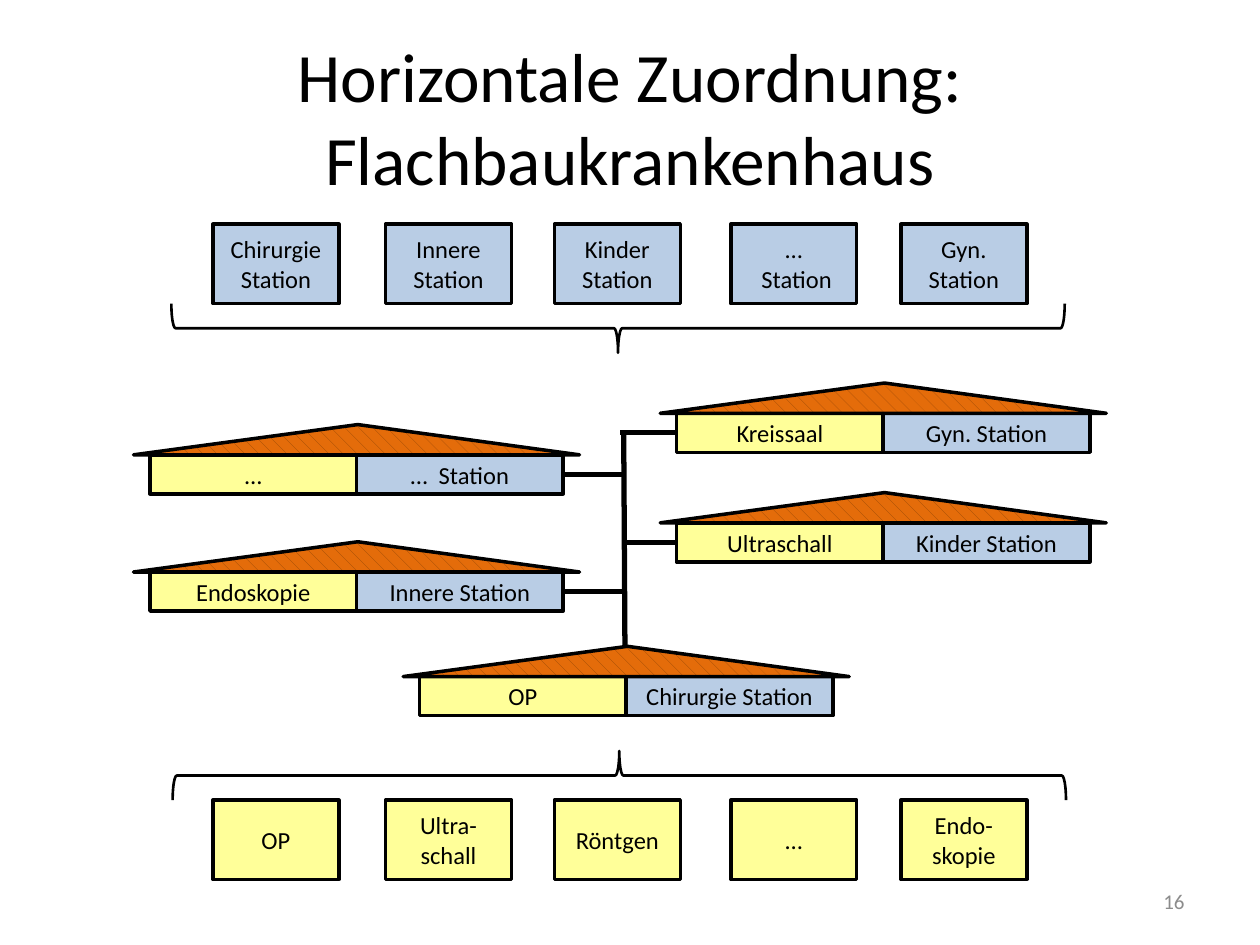
from pptx import Presentation
from pptx.dml.color import RGBColor
from pptx.enum.dml import MSO_PATTERN
from pptx.enum.shapes import MSO_CONNECTOR, MSO_SHAPE
from pptx.enum.text import MSO_ANCHOR, MSO_AUTO_SIZE, PP_ALIGN
from pptx.oxml.ns import qn
from pptx.util import Inches, Pt
from lxml.etree import SubElement

HUES = {"ward": "B9CDE5", "care": "FFFF99", "roof": "E46C0A",
        "tile": "984807", "ink": "000000", "grey": "8C8C8C"}
WALL_W, WALL_H = 1.64, 0.31
ROOF_W, ROOF_H, EAVE = 3.54, 0.24, 0.13
SPINE = 4.96


class Board:
    """Holds the style and the current slide."""
    font = "Calibri"

    def __init__(self, slide):
        self.slide = slide

    def hue(self, name):
        return RGBColor.from_string(HUES[name])

    def label(self, frame, text, size, align=PP_ALIGN.CENTER, ink="ink"):
        frame.text = text
        frame.word_wrap = True
        frame.vertical_anchor = MSO_ANCHOR.MIDDLE
        for par in frame.paragraphs:
            par.alignment = align
            par.font.name = self.font
            par.font.size = Pt(size)
            par.font.color.rgb = self.hue(ink)

    def title(self, text):
        shape = self.slide.shapes.title
        shape.left, shape.top = Inches(0.5), Inches(0.3)
        shape.width, shape.height = Inches(9), Inches(1.25)
        self.label(shape.text_frame, text, 39.6)
        shape.text_frame.auto_size = MSO_AUTO_SIZE.NONE

    def shape(self, kind, x, y, w, h, line=2):
        shape = self.slide.shapes.add_shape(
            kind, Inches(x), Inches(y), Inches(w), Inches(h))
        shape.shadow.inherit = False
        shape.line.color.rgb = self.hue("ink")
        shape.line.width = Pt(line)
        return shape

    def box(self, text, x, y, w, h, fill):
        box = self.shape(MSO_SHAPE.RECTANGLE, x, y, w, h)
        box.fill.solid()
        box.fill.fore_color.rgb = self.hue(fill)
        self.label(box.text_frame, text, 14)

    def brace(self, x, y, turn):
        brace = self.shape(MSO_SHAPE.RIGHT_BRACE, x, y, 0.39, 7.09, 1.5)
        brace.fill.background()
        brace.rotation = turn

    def house(self, x, y, care, ward):
        """Two rooms side by side under a roof; x, y is the wall corner."""
        self.box(care, x, y, WALL_W, WALL_H, "care")
        self.box(ward, x + WALL_W, y, WALL_W, WALL_H, "ward")
        roof = self.shape(MSO_SHAPE.ISOSCELES_TRIANGLE,
                          x - EAVE, y - ROOF_H, ROOF_W, ROOF_H)
        roof.adjustments[0] = 0.503
        roof.fill.patterned()
        roof.fill.pattern = MSO_PATTERN.SHINGLE
        roof.fill.fore_color.rgb = self.hue("tile")
        roof.fill.back_color.rgb = self.hue("roof")

    def line(self, x1, y1, x2, y2):
        line = self.slide.shapes.add_connector(
            MSO_CONNECTOR.STRAIGHT,
            Inches(x1), Inches(y1), Inches(x2), Inches(y2))
        line.line.color.rgb = self.hue("ink")
        line.line.width = Pt(3)
        SubElement(line._element.spPr, qn("a:effectLst"))

    def number(self, text):
        box = self.slide.shapes.add_textbox(
            Inches(7.17), Inches(6.95), Inches(2.33), Inches(0.4))
        self.label(box.text_frame, text, 12, PP_ALIGN.RIGHT, "grey")


def main():
    deck = Presentation()
    deck.slide_width, deck.slide_height = Inches(10), Inches(7.5)
    board = Board(deck.slides.add_slide(deck.slide_layouts[5]))
    board.title("Horizontale Zuordnung: Flachbaukrankenhaus")

    cols = [1.69, 3.06, 4.4, 5.8, 7.15]
    rows = [
        (1.78, "ward", ["Chirurgie Station", "Innere Station",
                        "Kinder Station", "…\n Station", "Gyn. Station"]),
        (6.35, "care", ["OP", "Ultra-schall", "Röntgen", "…",
                        "Endo-skopie"]),
    ]
    for y, fill, names in rows:
        for x, name in zip(cols, names):
            board.box(name, x, y, 1, 0.63, fill)
    board.brace(4.71, -0.94, 90)
    board.brace(4.72, 2.61, 270)

    left, right = 1.19, 5.37
    wings = [
        (right, 3.28, "Kreissaal", "Gyn. Station"),
        (left, 3.61, "…", "…  Station"),
        (right, 4.15, "Ultraschall", "Kinder Station"),
        (left, 4.54, "Endoskopie", "Innere Station"),
    ]
    for wing in wings:
        board.house(*wing)
    board.house(3.33, 5.37, "OP", "Chirurgie Station")

    top = wings[0][1] + WALL_H / 2
    board.line(SPINE, 5.13, SPINE - 0.01, top)
    for x, y, *_ in wings:
        mid = y + WALL_H / 2
        door = x if x == right else x + 2 * WALL_W
        board.line(door, mid, SPINE - 0.04 if mid == top else SPINE, mid)

    board.number("16")
    deck.save("out.pptx")


if __name__ == "__main__":
    main()
